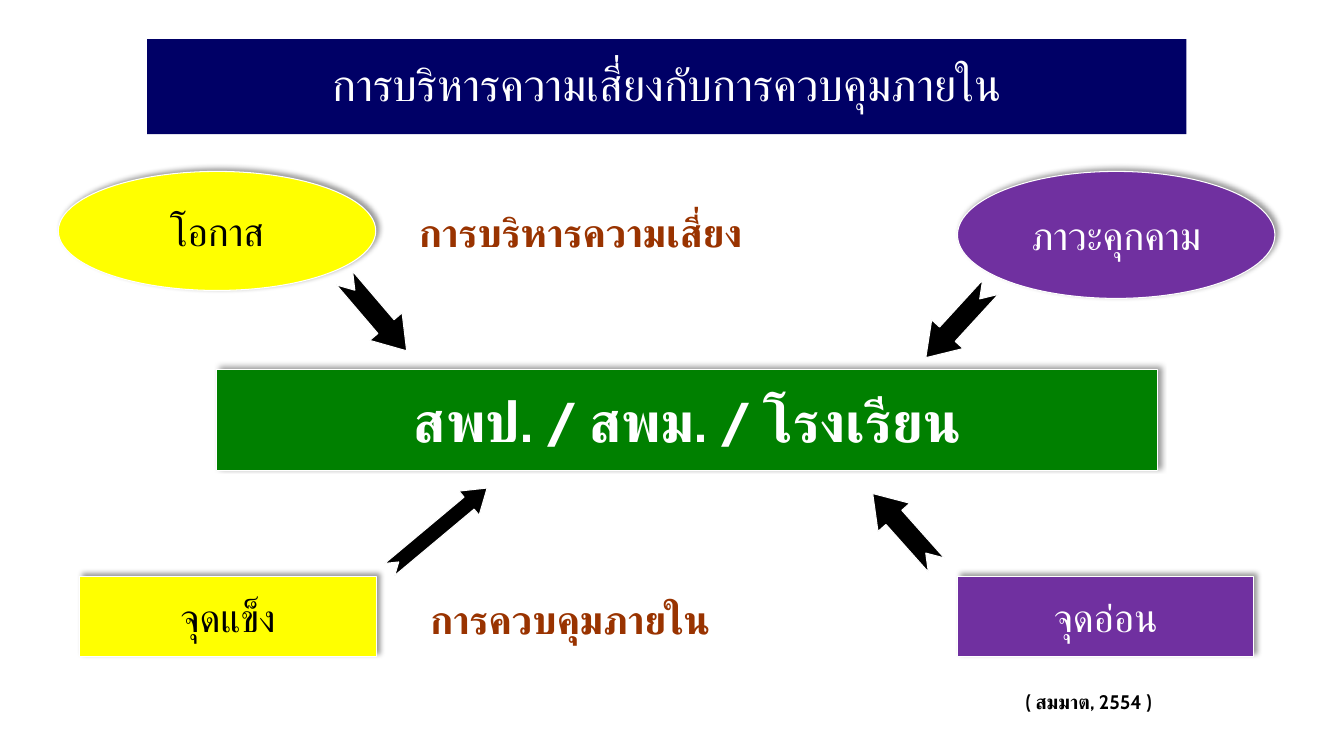
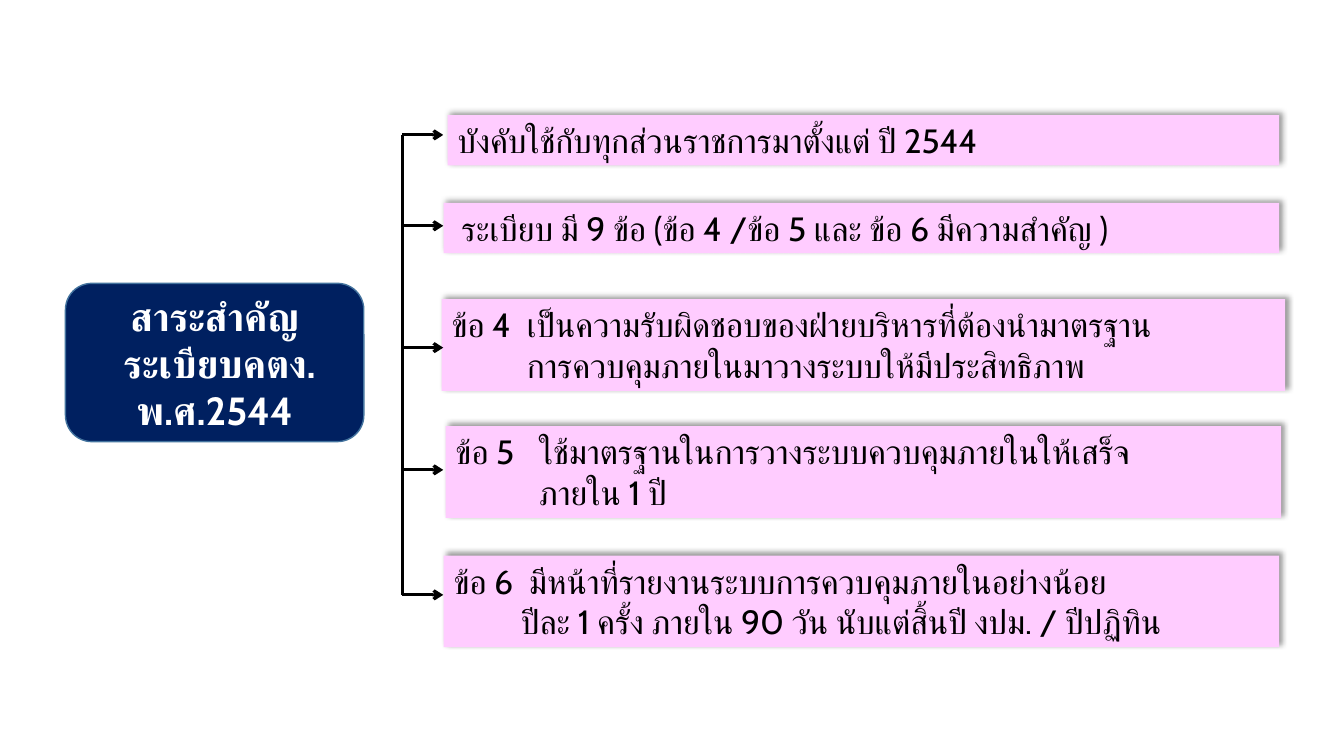
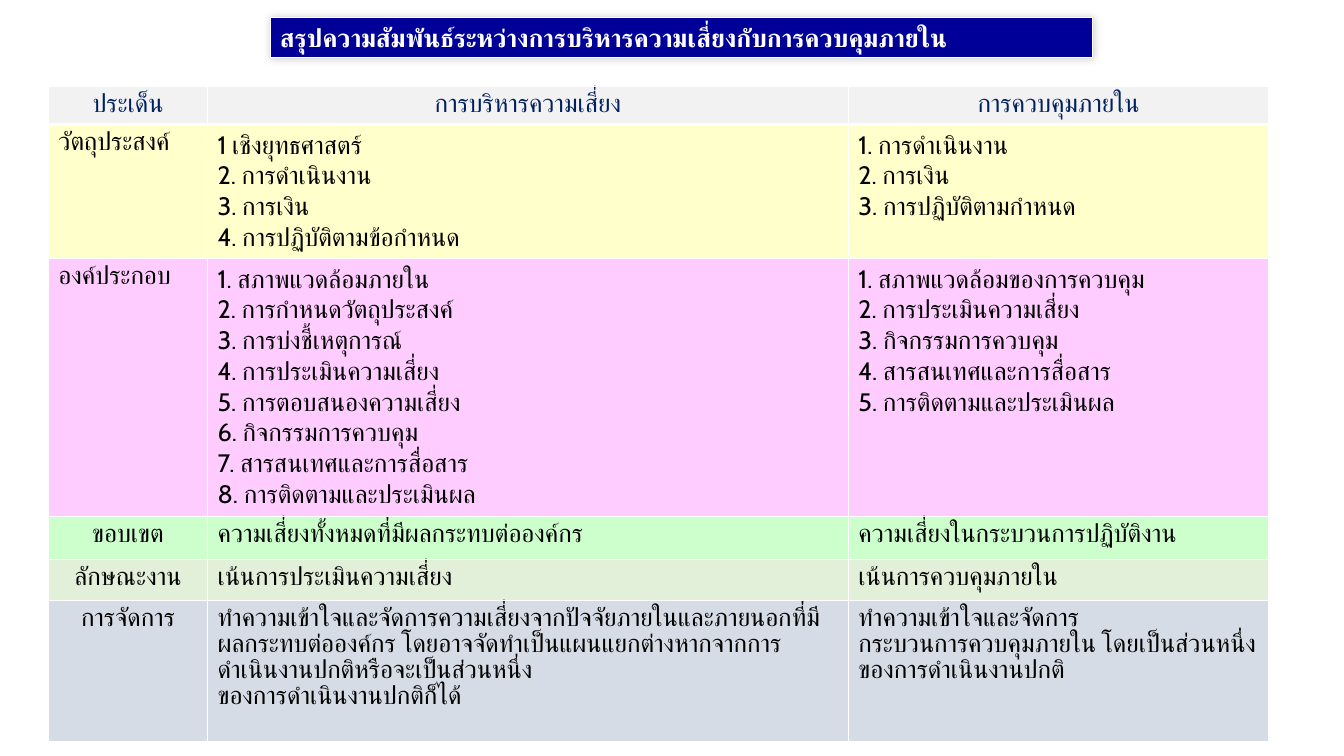
from dataclasses import dataclass
from lxml.etree import SubElement
from pptx import Presentation
from pptx.dml.color import RGBColor
from pptx.enum.shapes import MSO_CONNECTOR, MSO_SHAPE
from pptx.enum.text import MSO_ANCHOR, PP_ALIGN
from pptx.oxml.ns import qn
from pptx.util import Cm, Pt


@dataclass(frozen=True)
class Theme:
    font: str = "Cabin"
    white: str = "FFFFFF"
    black: str = "000000"
    title_fill: str = "000066"
    summary_fill: str = "000099"
    navy: str = "002060"
    navy_line: str = "43739E"
    yellow: str = "FFFF00"
    purple: str = "7030A0"
    green: str = "008000"
    brown: str = "993300"
    pink: str = "FFCCFF"
    header: str = "F2F2F2"
    cream: str = "FFFFCC"
    mint: str = "CCFFCC"
    sage: str = "E2F0D9"
    slate: str = "D6DCE5"
    title_size: int = 32
    hero_size: int = 40
    label_size: int = 28
    body_size: int = 24
    table_size: int = 18
    note_size: int = 14


T = Theme()
SHADOW = (40, 4, 3)
SOFT_SHADOW = (20, 6, 0)
TABLE_SPACING = 0.85


def rgb(color):
    return RGBColor.from_string(color)


def write(tf, lines, size, color, bold=False, align=PP_ALIGN.LEFT, spacing=None):
    for i, line in enumerate(lines):
        p = tf.paragraphs[0] if i == 0 else tf.add_paragraph()
        p.text = line
        p.alignment = align
        if spacing:
            p.line_spacing = spacing
        p.font.name = T.font
        p.font.size = Pt(size)
        p.font.bold = bold
        p.font.color.rgb = rgb(color)
        props = p._p.pPr.find(qn("a:defRPr"))
        SubElement(props, qn("a:cs"), typeface=T.font)


def indent(p, left, first=0):
    pPr = p._p.get_or_add_pPr()
    pPr.set("marL", str(Cm(left)))
    pPr.set("indent", str(Cm(first)))


def add_shadow(sp, alpha, blur, dist):
    effects = sp._element.spPr.find(qn("a:effectLst"))
    outer = SubElement(effects, qn("a:outerShdw"), blurRad=str(Pt(blur)),
                       dist=str(Pt(dist)), dir=str(315 * 60000), rotWithShape="0")
    color = SubElement(outer, qn("a:srgbClr"), val=T.black)
    SubElement(color, qn("a:alpha"), val=str(alpha * 1000))


def add_box(s, kind, box, fill, line=None, width=0.75, shadow=None):
    sp = s.shapes.add_shape(kind, *map(Cm, box))
    sp.shadow.inherit = False
    sp.fill.solid()
    sp.fill.fore_color.rgb = rgb(fill)
    if line:
        sp.line.color.rgb = rgb(line)
        sp.line.width = Pt(width)
    else:
        sp.line.fill.background()
    if shadow:
        add_shadow(sp, *shadow)
    sp.text_frame.word_wrap = True
    sp.text_frame.vertical_anchor = MSO_ANCHOR.MIDDLE
    return sp


def add_label(s, kind, box, fill, text, color, size=T.label_size, bold=False):
    sp = add_box(s, kind, box, fill, T.white, shadow=SHADOW)
    write(sp.text_frame, [text], size, color, bold, PP_ALIGN.CENTER)


def add_text(s, box, text, size, color):
    tf = s.shapes.add_textbox(*map(Cm, box)).text_frame
    tf.word_wrap = True
    write(tf, [text], size, color, True)


def add_notched_arrow(s, box, rotation):
    sp = add_box(s, MSO_SHAPE.NOTCHED_RIGHT_ARROW, box, T.black, T.white)
    sp.adjustments[0] = 0.5
    sp.adjustments[1] = 0.75
    sp.rotation = rotation


def add_line(s, x1, y1, x2, y2, arrow=False):
    cn = s.shapes.add_connector(MSO_CONNECTOR.STRAIGHT, *map(Cm, (x1, y1, x2, y2)))
    cn.line.color.rgb = rgb(T.black)
    cn.line.width = Pt(2.25)
    if arrow:
        SubElement(cn.line._get_or_add_ln(), qn("a:tailEnd"), type="arrow")
    SubElement(cn._element.spPr, qn("a:effectLst"))


def add_clause(s, box, lines, tab, hang):
    sp = add_box(s, MSO_SHAPE.RECTANGLE, box, T.pink, shadow=SHADOW)
    tf = sp.text_frame
    tf.vertical_anchor = MSO_ANCHOR.TOP
    write(tf, lines, T.body_size, T.black)
    first, *rest = tf.paragraphs
    indent(first, tab, -tab if rest else 0)
    for p in rest:
        indent(p, hang)


def set_borders(cell, bottom):
    tcPr = cell._tc.get_or_add_tcPr()
    for i, (side, width) in enumerate((("L", 1), ("R", 1), ("T", 1), ("B", bottom))):
        ln = tcPr.makeelement(qn(f"a:ln{side}"), {"w": str(Pt(width))})
        fill = SubElement(ln, qn("a:solidFill"))
        SubElement(fill, qn("a:srgbClr"), val=T.white)
        tcPr.insert(i, ln)


def add_grid(s, left, top, widths, rows):
    frame = s.shapes.add_table(len(rows), len(widths), Cm(left), Cm(top),
                               Cm(sum(widths)), Cm(sum(row[0] for row in rows)))
    table = frame.table
    table.first_row = table.horz_banding = False
    for column, width in zip(table.columns, widths):
        column.width = Cm(width)
    for i, (height, fill, label_align, *texts) in enumerate(rows):
        header = i == 0
        table.rows[i].height = Cm(height)
        for j, lines in enumerate(texts):
            cell = table.cell(i, j)
            cell.fill.solid()
            cell.fill.fore_color.rgb = rgb(fill)
            set_borders(cell, 3 if header else 1)
            numbered = lines[0].startswith("1")
            write(cell.text_frame, lines, T.table_size,
                  T.navy if header else T.black,
                  align=label_align if header or j == 0 else PP_ALIGN.LEFT,
                  spacing=None if numbered else TABLE_SPACING)


def build_relation(s):
    title = add_box(s, MSO_SHAPE.RECTANGLE, (3.71, 0.99, 26.19, 2.39), T.title_fill)
    write(title.text_frame, ["การบริหารความเสี่ยงกับการควบคุมภายใน"], T.title_size,
          T.white, align=PP_ALIGN.CENTER, spacing=0.9)
    oval, rect = MSO_SHAPE.OVAL, MSO_SHAPE.RECTANGLE
    for kind, box, fill, text, color in (
        (oval, (1.47, 4.32, 8, 3), T.yellow, "โอกาส", T.black),
        (oval, (24.13, 4.32, 8, 3.2), T.purple, "ภาวะคุกคาม", T.white),
        (rect, (2.01, 14.53, 7.47, 2.01), T.yellow, "จุดแข็ง", T.black),
        (rect, (24.13, 14.53, 7.47, 2.01), T.purple, "จุดอ่อน", T.white),
    ):
        add_label(s, kind, box, fill, text, color)
    add_label(s, rect, (5.46, 9.32, 23.72, 2.54), T.green, "สพป. / สพม. / โรงเรียน",
              T.white, T.hero_size, True)
    add_text(s, (10.31, 5.13, 13.23, 1.45), "การบริหารความเสี่ยง", T.label_size, T.brown)
    add_text(s, (10.59, 14.88, 13.23, 1.45), "การควบคุมภายใน", T.label_size, T.brown)
    add_text(s, (25.6, 17.27, 4.5, 0.86), "( สมมาต, 2554 )", T.note_size, T.black)
    for box, rotation in (
        ((9.45, 12.93, 3.2, 0.79), 320.1),
        ((22.94, 7.59, 2.41, 1.07), 132.5),
        ((8.26, 7.39, 2.41, 1.07), 49.5),
        ((21.59, 12.8, 2.41, 1.07), 228.3),
    ):
        add_notched_arrow(s, box, rotation)


def build_regulation(s):
    sp = add_box(s, MSO_SHAPE.ROUNDED_RECTANGLE, (1.65, 7.14, 7.52, 3.99),
                 T.navy, T.navy_line, 1)
    write(sp.text_frame, ["สาระสำคัญ", "ระเบียบคตง. พ.ศ.2544"], T.label_size,
          T.white, True, PP_ALIGN.CENTER)
    indent(sp.text_frame.paragraphs[1], 0, 0.25)
    clauses = (
        ((11.28, 2.9, 20.96, 1.27), 3.4, 0, 0,
         ["บังคับใช้กับทุกส่วนราชการมาตั้งแต่ ปี 2544"]),
        ((11.18, 5.11, 21.06, 1.27), 5.69, 0.2, 0,
         ["ระเบียบ มี 9 ข้อ (ข้อ 4 /ข้อ 5 และ ข้อ 6 มีความสำคัญ )"]),
        ((11.13, 7.54, 21.26, 2.31), 8.76, 1.9, 1.9,
         ["ข้อ 4\tเป็นความรับผิดชอบของฝ่ายบริหารที่ต้องนำมาตรฐาน",
          "การควบคุมภายในมาวางระบบให้มีประสิทธิภาพ"]),
        ((11.23, 10.74, 21.06, 2.31), 11.84, 2.1, 2.1,
         ["ข้อ 5\tใช้มาตรฐานในการวางระบบควบคุมภายในให้เสร็จ", "ภายใน 1 ปี"]),
        ((11.18, 14, 21.06, 2.31), 14.99, 1.9, 1.7,
         ["ข้อ 6\tมีหน้าที่รายงานระบบการควบคุมภายในอย่างน้อย",
          "ปีละ 1 ครั้ง ภายใน 90 วัน นับแต่สิ้นปี งปม. / ปีปฏิทิน"]),
    )
    spine = 10.14
    for box, y, tab, hang, lines in clauses:
        add_clause(s, box, lines, tab, hang)
        add_line(s, spine, y, 11.17, y, True)
    add_line(s, spine, clauses[0][1], spine, clauses[-1][1])


def build_summary(s):
    left, center = PP_ALIGN.LEFT, PP_ALIGN.CENTER
    rows = (
        (0.96, T.header, center, ["ประเด็น"], ["การบริหารความเสี่ยง"], ["การควบคุมภายใน"]),
        (3.38, T.cream, left, ["วัตถุประสงค์"],
         ["1 เชิงยุทธศาสตร์", "2. การดำเนินงาน", "3. การเงิน", "4. การปฏิบัติตามข้อกำหนด"],
         ["1. การดำเนินงาน", "2. การเงิน", "3. การปฏิบัติตามกำหนด"]),
        (6.49, T.pink, left, ["องค์ประกอบ"],
         ["1. สภาพแวดล้อมภายใน", "2. การกำหนดวัตถุประสงค์", "3. การบ่งชี้เหตุการณ์",
          "4. การประเมินความเสี่ยง", "5. การตอบสนองความเสี่ยง", "6. กิจกรรมการควบคุม",
          "7. สารสนเทศและการสื่อสาร", "8. การติดตามและประเมินผล"],
         ["1. สภาพแวดล้อมของการควบคุม", "2. การประเมินความเสี่ยง", "3. กิจกรรมการควบคุม",
          "4. สารสนเทศและการสื่อสาร", "5. การติดตามและประเมินผล"]),
        (1.08, T.mint, center, ["ขอบเขต"], ["ความเสี่ยงทั้งหมดที่มีผลกระทบต่อองค์กร"],
         ["ความเสี่ยงในกระบวนการปฏิบัติงาน"]),
        (1.04, T.sage, center, ["ลักษณะงาน"], ["เน้นการประเมินความเสี่ยง"],
         ["เน้นการควบคุมภายใน"]),
        (3.56, T.slate, center, ["การจัดการ"],
         ["ทำความเข้าใจและจัดการความเสี่ยงจากปัจจัยภายในและภายนอกที่มีผลกระทบต่อองค์กร "
          "โดยอาจจัดทำเป็นแผนแยกต่างหากจากการดำเนินงานปกติหรือจะเป็นส่วนหนึ่ง",
          "ของการดำเนินงานปกติก็ได้"],
         ["ทำความเข้าใจและจัดการ",
          "กระบวนการควบคุมภายใน โดยเป็นส่วนหนึ่งของการดำเนินงานปกติ"]),
    )
    add_grid(s, 1.22, 2.18, (4.01, 16.15, 10.59), rows)
    title = add_box(s, MSO_SHAPE.RECTANGLE, (6.81, 0.43, 20.73, 1.02),
                    T.summary_fill, T.white, shadow=SOFT_SHADOW)
    write(title.text_frame,
          ["สรุปความสัมพันธ์ระหว่างการบริหารความเสี่ยงกับการควบคุมภายใน"],
          T.table_size, T.white, True)


def main():
    prs = Presentation()
    prs.slide_width, prs.slide_height = Cm(33.87), Cm(19.05)
    for build in (build_relation, build_regulation, build_summary):
        build(prs.slides.add_slide(prs.slide_layouts[6]))
    prs.save("out.pptx")


if __name__ == "__main__":
    main()
